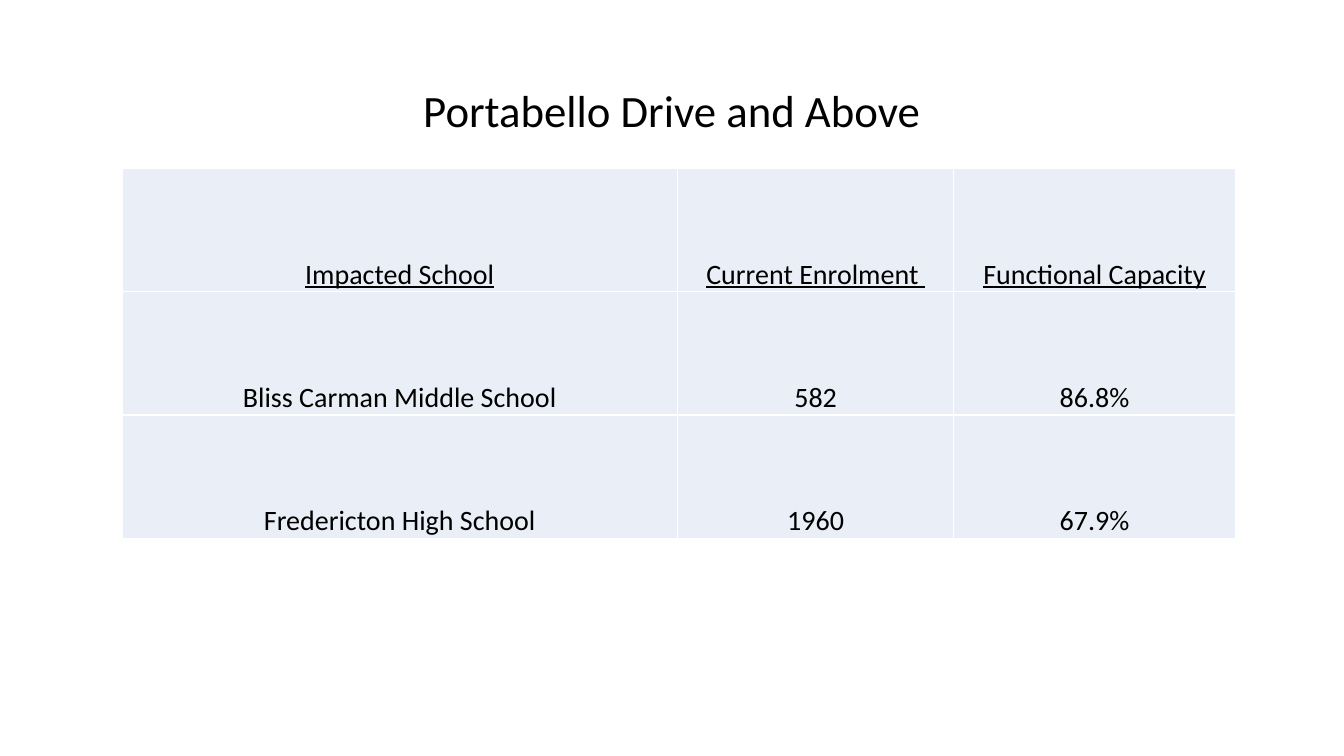
from dataclasses import dataclass

from lxml import etree
from pptx import Presentation
from pptx.dml.color import RGBColor
from pptx.enum.text import MSO_ANCHOR, PP_ALIGN
from pptx.oxml.ns import qn
from pptx.util import Pt

CENTER = PP_ALIGN.CENTER
MIDDLE = MSO_ANCHOR.MIDDLE
BOTTOM = MSO_ANCHOR.BOTTOM
TITLE_ONLY = 5


@dataclass(frozen=True)
class Theme:
    font: str = "Calibri"
    ink: RGBColor = RGBColor(0x00, 0x00, 0x00)
    cell: RGBColor = RGBColor(0xEA, 0xEF, 0xF7)
    rule: str = "FFFFFF"
    rule_width: int = 1
    title_size: int = 32
    table_size: int = 20


THEME = Theme()

SCHOOLS = [
    ("Impacted School", "Current Enrolment ", "Functional Capacity"),
    ("Bliss Carman Middle School", "582", "86.8%"),
    ("Fredericton High School", "1960", "67.9%"),
]
COLUMN_SHARES = (0.499, 0.248, 0.253)


def format_text(frame, size, underline=False):
    paragraph = frame.paragraphs[0]
    paragraph.alignment = CENTER
    font = paragraph.runs[0].font
    font.name = THEME.font
    font.size = Pt(size)
    font.color.rgb = THEME.ink
    font.underline = underline


def add_title(slide, text, left, top, width, height):
    title = slide.shapes.title
    title.left, title.top = Pt(left), Pt(top)
    title.width, title.height = Pt(width), Pt(height)
    frame = title.text_frame
    frame.text = text
    frame.vertical_anchor = MIDDLE
    frame.paragraphs[0].line_spacing = 0.9
    format_text(frame, THEME.title_size)


def add_borders(cell):
    properties = cell._tc.get_or_add_tcPr()
    for position, side in enumerate(("lnL", "lnR", "lnT", "lnB")):
        line = etree.Element(qn(f"a:{side}"), w=str(Pt(THEME.rule_width)))
        fill = etree.SubElement(line, qn("a:solidFill"))
        etree.SubElement(fill, qn("a:srgbClr"), val=THEME.rule)
        properties.insert(position, line)


def fill_cell(cell, text, is_heading):
    cell.text = text
    cell.vertical_anchor = BOTTOM
    cell.margin_left = cell.margin_right = cell.margin_top = Pt(0.75)
    cell.margin_bottom = Pt(0)
    cell.fill.solid()
    cell.fill.fore_color.rgb = THEME.cell
    add_borders(cell)
    format_text(cell.text_frame, THEME.table_size, is_heading)


def add_school_table(slide, schools, left, top, width, height):
    table = slide.shapes.add_table(
        len(schools), len(COLUMN_SHARES), Pt(left), Pt(top), Pt(width), Pt(height)
    ).table
    table.first_row = False
    table.horz_banding = False
    for column, share in zip(table.columns, COLUMN_SHARES):
        column.width = Pt(width * share)
    for row_index, school in enumerate(schools):
        table.rows[row_index].height = Pt(height / len(schools))
        for column_index, text in enumerate(school):
            fill_cell(table.cell(row_index, column_index), text, row_index == 0)


def main():
    deck = Presentation()
    deck.slide_width, deck.slide_height = Pt(960), Pt(540)
    slide = deck.slides.add_slide(deck.slide_layouts[TITLE_ONLY])
    add_title(slide, "Portabello Drive and Above", 66, 28.75, 828, 104.4)
    add_school_table(slide, SCHOOLS, 87.1, 120.5, 795.4, 264)
    deck.save("out.pptx")


if __name__ == "__main__":
    main()
